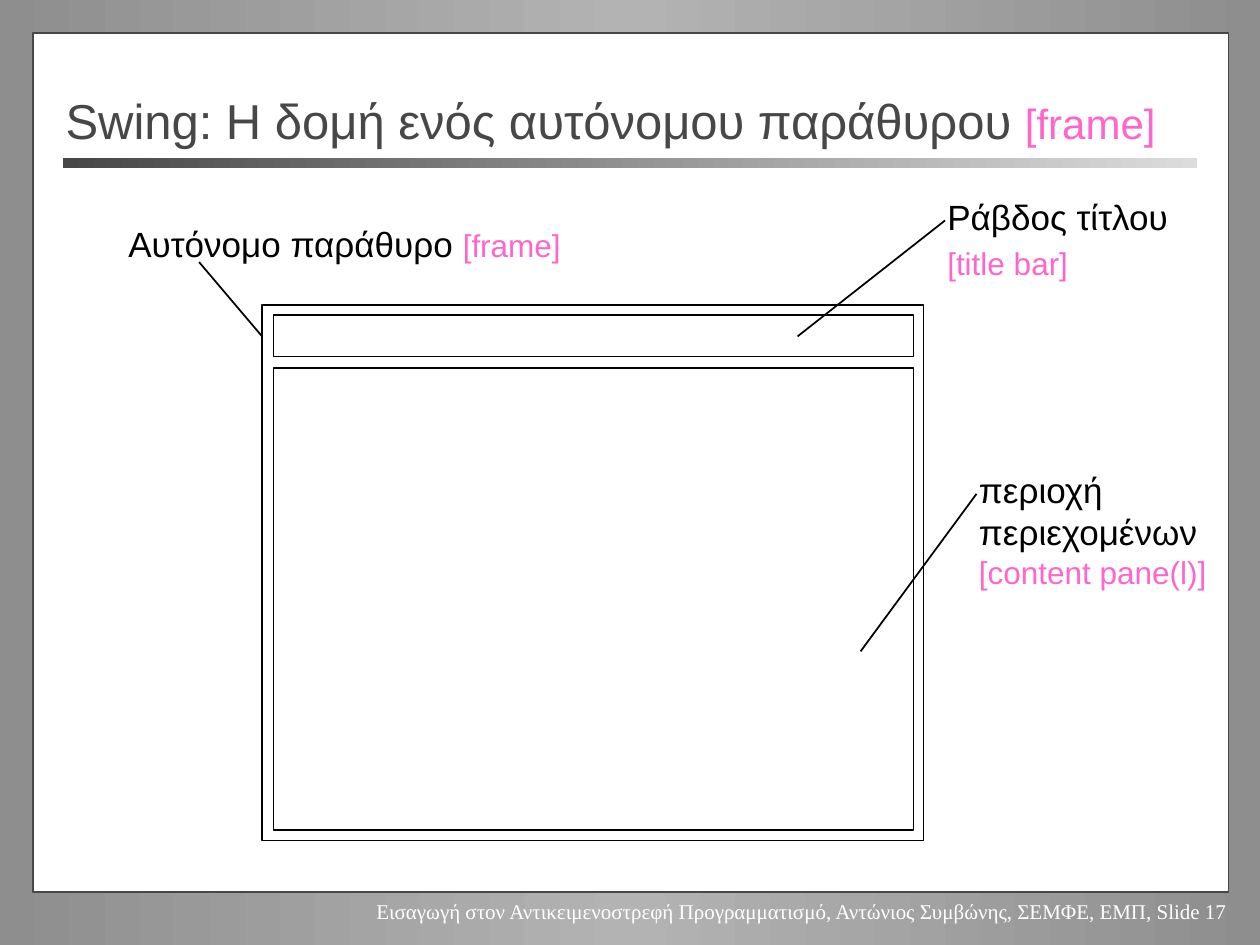
"""Build a slide that labels the parts of a Swing frame."""
from copy import deepcopy

from lxml.etree import SubElement
from pptx import Presentation
from pptx.dml.color import RGBColor
from pptx.enum.shapes import MSO_CONNECTOR, MSO_SHAPE
from pptx.enum.text import MSO_ANCHOR, MSO_AUTO_SIZE, PP_ALIGN
from pptx.oxml.ns import qn
from pptx.util import Inches, Pt

COLORS = {
    "edge": "8E8E8E", "middle": "B3B3B3", "paper": "FFFFFF", "ink": "000000",
    "heading": "474747", "rule_end": "DCDCDC", "term": "FF66CC",
}


def write_text(box, paragraphs, font="Arial", align=PP_ALIGN.LEFT, before=0,
               wrap=False, fit=MSO_AUTO_SIZE.SHAPE_TO_FIT_TEXT, anchor=MSO_ANCHOR.TOP):
    frame = box.text_frame
    frame.word_wrap, frame.auto_size, frame.vertical_anchor = wrap, fit, anchor
    for index, runs in enumerate(paragraphs):
        paragraph = frame.add_paragraph() if index else frame.paragraphs[0]
        paragraph.alignment = align
        paragraph.space_before = Pt(before)
        for wording, size, color in runs:
            run = paragraph.add_run()
            run.text = wording
            run.font.name = font
            run.font.size = Pt(size)
            run.font.color.rgb = RGBColor.from_string(COLORS[color])


def shade(fill, element, colors):
    fill.gradient()
    fill.gradient_angle = 0
    stop_list = next(element.iter(qn("a:gsLst")))
    for _ in colors[2:]:
        stop_list.append(deepcopy(stop_list[0]))
    for index, (stop, color) in enumerate(zip(fill.gradient_stops, colors)):
        stop.position = index / (len(colors) - 1)
        stop.color.rgb = RGBColor.from_string(COLORS[color])


presentation = Presentation()
presentation.slide_width, presentation.slide_height = Inches(10), Inches(7.5)
slide = presentation.slides.add_slide(presentation.slide_layouts[5])
shapes = slide.shapes
shade(slide.background.fill, slide.element, ["edge", "middle", "edge"])

paper = shapes.add_shape(MSO_SHAPE.RECTANGLE, Inches(0.26), Inches(0.26), Inches(9.49), Inches(6.82))
paper.shadow.inherit = False
paper.fill.solid()
paper.fill.fore_color.rgb = RGBColor.from_string(COLORS["paper"])
paper.line.color.rgb = RGBColor.from_string(COLORS["heading"])
paper.line.width = Pt(1)

title_rule = shapes.add_shape(MSO_SHAPE.RECTANGLE, Inches(0.5), Inches(1.25), Inches(9), Inches(0.08))
title_rule.shadow.inherit = False
shade(title_rule.fill, title_rule.element, ["heading", "rule_end"])
title_rule.line.fill.background()

footer = shapes.add_textbox(Inches(2.5), Inches(7.08), Inches(7.34), Inches(0.3))
write_text(footer, [[("Εισαγωγή στον Αντικειμενοστρεφή Προγραμματισμό, Αντώνιος Συμβώνης, "
                      "ΣΕΜΦΕ, ΕΜΠ, Slide 17", 12, "paper")]],
           font="Times New Roman", align=PP_ALIGN.RIGHT)

title = shapes.title
footer.element.addnext(title.element)
title.left, title.top, title.width, title.height = Inches(0.42), Inches(0.55), Inches(9.17), Inches(0.62)
write_text(title, [[("Swing: Η δομή ενός αυτόνομου παράθυρου ", 28, "heading"),
                    ("[frame]", 24, "term"), (" ", 44, "heading")]],
           wrap=True, fit=MSO_AUTO_SIZE.NONE, anchor=MSO_ANCHOR.MIDDLE)

window_parts = [
    (2.08, 2.42, 5.25, 4.25),
    (2.17, 2.5, 5.08, 0.33),
    (2.17, 2.92, 5.08, 3.67),
]
for bounds in window_parts:
    window_part = shapes.add_shape(MSO_SHAPE.RECTANGLE, *map(Inches, bounds))
    window_part.shadow.inherit = False
    window_part.fill.background()
    window_part.line.color.rgb = RGBColor.from_string(COLORS["ink"])
    window_part.line.width = Pt(1)

labels = [
    ((0.92, 1.72, 3.63, 0.43), False,
     [[("Αυτόνομο παράθυρο ", 20, "ink"), ("[frame]", 18, "term")]]),
    ((7.42, 1.5, 2.03, 0.79), False,
     [[("Ράβδος τίτλου", 20, "ink")], [("[title bar]", 18, "term")]]),
    ((7.67, 3.67, 2.08, 1.06), True,
     [[("περιοχή περιεχομένων ", 20, "ink"), ("[content pane(l)]", 18, "term")]]),
]
for bounds, wrap, paragraphs in labels:
    write_text(shapes.add_textbox(*map(Inches, bounds)), paragraphs, before=4, wrap=wrap)

pointers = [
    (1.58, 2.08, 2.08, 2.67),
    (7.5, 1.75, 6.33, 2.67),
    (7.75, 3.92, 6.83, 5.17),
]
for ends in pointers:
    pointer = shapes.add_connector(MSO_CONNECTOR.STRAIGHT, *map(Inches, ends))
    pointer.line.color.rgb = RGBColor.from_string(COLORS["ink"])
    pointer.line.width = Pt(1)
    SubElement(pointer.element.spPr, qn("a:effectLst"))

presentation.save("out.pptx")
